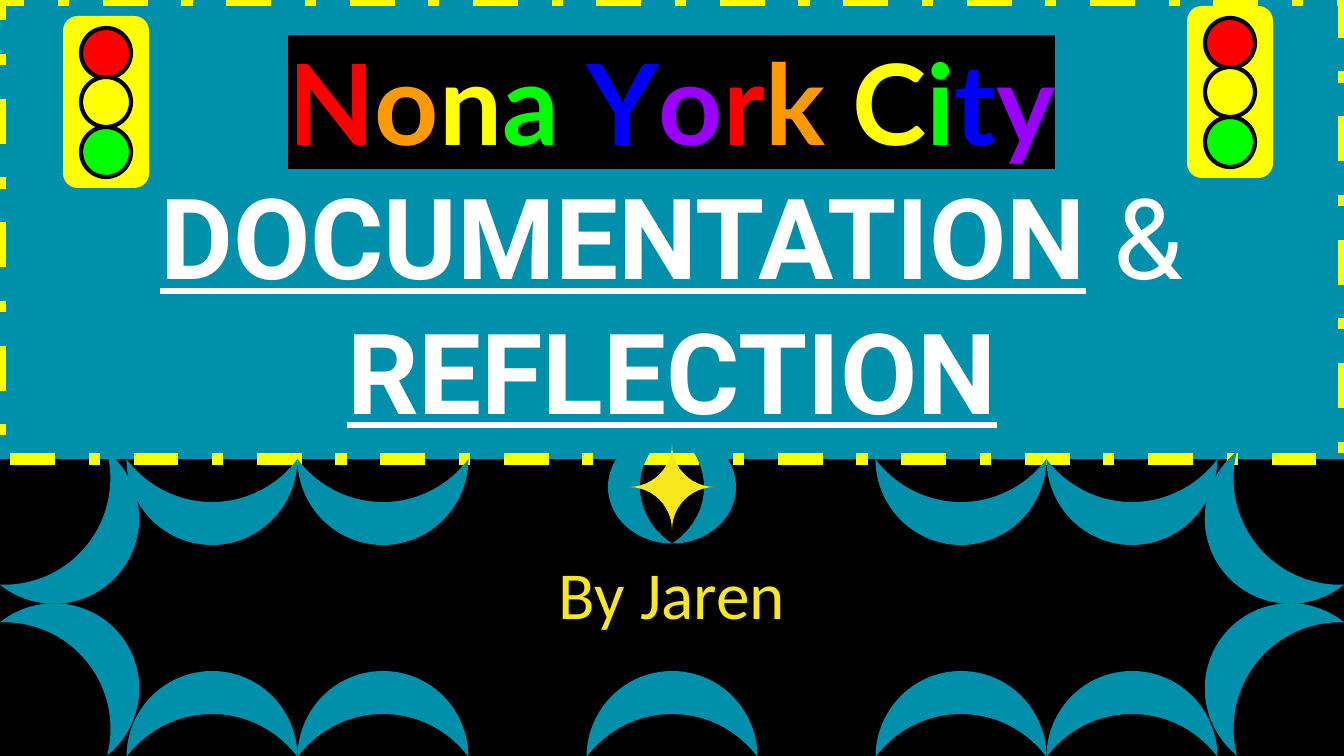
from lxml.etree import SubElement
from pptx import Presentation
from pptx.dml.color import RGBColor
from pptx.enum.dml import MSO_LINE
from pptx.enum.shapes import MSO_SHAPE
from pptx.enum.text import MSO_ANCHOR, PP_ALIGN
from pptx.oxml.ns import qn
from pptx.util import Pt

PX = 914400 / 134.4
WIDTH, HEIGHT = 1344, 756

BLACK = RGBColor(0, 0, 0)
WHITE = RGBColor(255, 255, 255)
TEAL = RGBColor(0, 144, 172)
GOLD = RGBColor(248, 231, 28)
RED = RGBColor(255, 0, 0)
ORANGE = RGBColor(255, 153, 0)
YELLOW = RGBColor(255, 255, 0)
GREEN = RGBColor(0, 255, 0)
BLUE = RGBColor(0, 0, 255)
PURPLE = RGBColor(153, 0, 255)

CITY = "Nona York City"
RAINBOW = [RED, ORANGE, YELLOW, GREEN, BLUE, PURPLE]
HEADING = [
    (" ", {"name": "Arial Narrow", "bold": False}),
    ("DOCUMENTATION", {"name": "Roboto", "bold": True, "underline": True}),
    (" & ", {"name": "Roboto", "bold": False}),
    ("REFLECTION", {"name": "Roboto", "bold": True, "underline": True}),
]
AUTHOR = "By Jaren"

MOON = (86, 171)
SMALL_MOON = (64, 113)
SCALLOP_TOP, SCALLOP_BOTTOM = 502, 714
SCALLOPS = [212, 383, 961, 1132]
CORNERS = [
    (1257, 545, 321.2, False),
    (1257, 662, 218.8, True),
    (87, 545, 38.8, True),
    (87, 662, 141.2, False),
]
EMBLEM = (672, 487)
LIGHT_SIZE = (86, 172)
LIGHTS = [(106, 102), (1230, 92)]
LAMPS = [(RED, -49), (GREEN, 50), (YELLOW, 0)]


def px(value):
    return round(value * PX)


def add_centred(kind, x, y, size, fill, rotation=0, flip=False, bend=None):
    width, height = size
    shape = slide.shapes.add_shape(
        kind, px(x - width / 2), px(y - height / 2), px(width), px(height))
    shape.shadow.inherit = False
    shape.fill.solid()
    shape.fill.fore_color.rgb = fill
    shape.line.fill.background()
    shape.rotation = rotation
    if flip:
        shape.element.spPr.find(qn("a:xfrm")).set("flipH", "1")
    if bend is not None:
        shape.adjustments[0] = bend
    return shape


def add_moon(x, y, rotation, flip=False, size=MOON):
    add_centred(MSO_SHAPE.MOON, x, y, size, TEAL, rotation, flip, 0.5)


def add_paragraph_box(left, top, width, height, anchor):
    frame = slide.shapes.add_textbox(*map(px, (left, top, width, height))).text_frame
    margins = dict.fromkeys(
        ["margin_left", "margin_top", "margin_right", "margin_bottom"], Pt(7.2))
    for key, value in {**margins, "word_wrap": True, "vertical_anchor": anchor}.items():
        setattr(frame, key, value)
    paragraph = frame.paragraphs[0]
    paragraph.alignment = PP_ALIGN.CENTER
    return paragraph


def add_run(paragraph, text, colour, formats, highlight=None):
    run = paragraph.add_run()
    run.text = text
    for key, value in formats.items():
        setattr(run.font, key, value)
    run.font.color.rgb = colour
    if highlight is not None:
        properties = run.font._element
        mark = SubElement(properties, qn("a:highlight"))
        SubElement(mark, qn("a:srgbClr"), val=str(highlight))
        properties.find(qn("a:solidFill")).addnext(mark)


deck = Presentation()
deck.slide_width, deck.slide_height = px(WIDTH), px(HEIGHT)
slide = deck.slides.add_slide(deck.slide_layouts[6])
slide.background.fill.solid()
slide.background.fill.fore_color.rgb = BLACK

road = add_centred(MSO_SHAPE.RECTANGLE, 672, 229.5, (WIDTH, 459), TEAL)
road.line.color.rgb = YELLOW
road.line.width = Pt(6)
road.line.dash_style = MSO_LINE.DASH_DOT

for corner in CORNERS:
    add_moon(*corner)
emblem_x, emblem_y = EMBLEM
for offset, rotation in [(-32, 0), (32, 180)]:
    add_moon(emblem_x + offset, emblem_y, rotation, size=SMALL_MOON)
add_centred(MSO_SHAPE.PLAQUE, *EMBLEM, (86, 86), GOLD, bend=0.5)
for x in SCALLOPS:
    add_moon(x, SCALLOP_TOP, 90, True)
for x in [*SCALLOPS, emblem_x]:
    add_moon(x, SCALLOP_BOTTOM, 90)

title = add_paragraph_box(0, 5, WIDTH, 445, MSO_ANCHOR.BOTTOM)
letter_count = 0
for letter in CITY:
    colour = WHITE
    if letter != " ":
        colour = RAINBOW[letter_count % len(RAINBOW)]
        letter_count += 1
    add_run(title, letter, colour, {"name": "Lato", "size": Pt(60), "bold": True}, BLACK)
for text, formats in HEADING:
    add_run(title, text, WHITE, {"size": Pt(60), **formats})

author = add_paragraph_box(63, 500, 1218, 185, MSO_ANCHOR.MIDDLE)
add_run(author, AUTHOR, GOLD, {"name": "Calibri", "size": Pt(36)})

for x, y in LIGHTS:
    add_centred(MSO_SHAPE.ROUNDED_RECTANGLE, x, y, LIGHT_SIZE, YELLOW, bend=0.17)
    for colour, offset in LAMPS:
        lamp = add_centred(MSO_SHAPE.OVAL, x, y + offset, (50, 50), colour)
        lamp.line.color.rgb = BLACK
        lamp.line.width = Pt(2.25)

deck.save("out.pptx")
